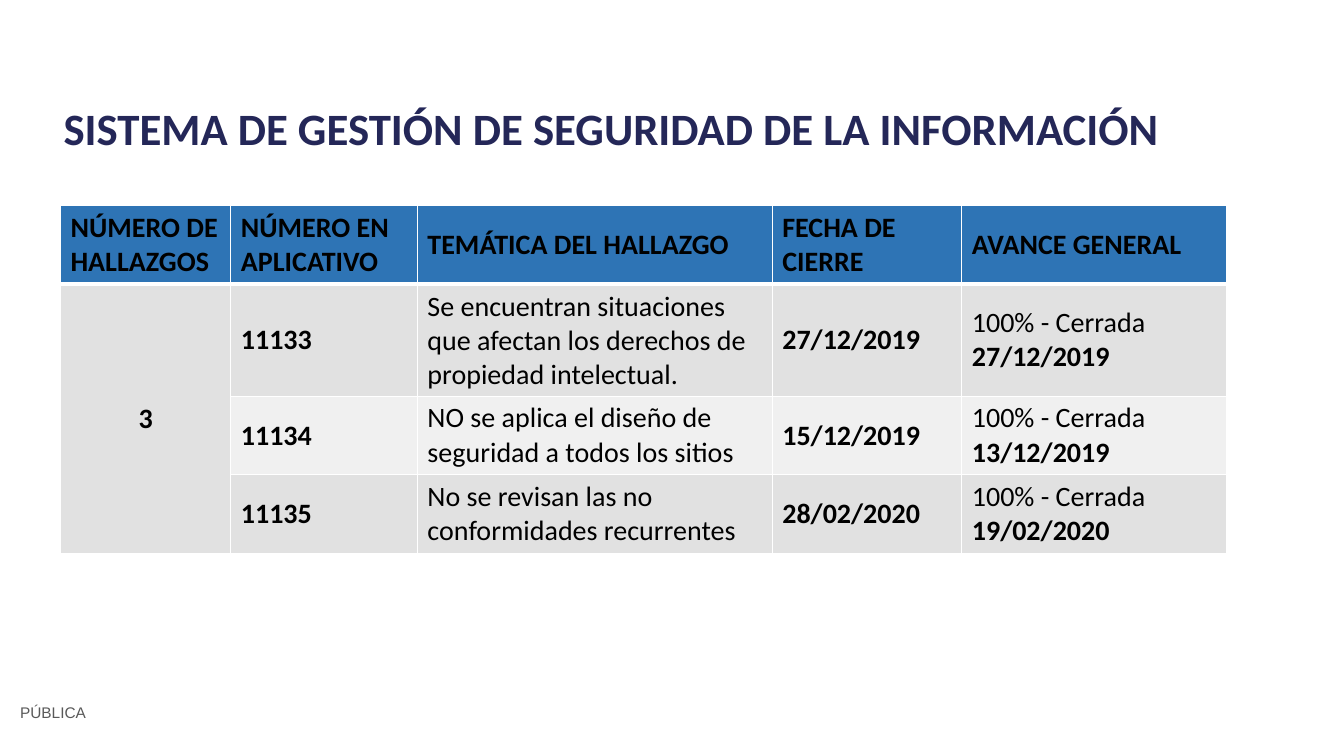
import pptx
import pptx.util
import pptx.dml.color
import pptx.enum.text
import pptx.oxml.ns
import lxml.etree
from dataclasses import dataclass

Inches = pptx.util.Inches
Align = pptx.enum.text.PP_ALIGN
Anchor = pptx.enum.text.MSO_ANCHOR


@dataclass(frozen=True)
class Theme:
    heading: str = "242758"
    label: str = "595959"
    text: str = "000000"
    header_fill: str = "2E74B5"
    band_fills: tuple = ("E1E1E1", "F0F0F0")
    border: str = "FFFFFF"
    font: str = "Calibri"
    label_font: str = "Arial"
    title_size: int = 32
    table_size: int = 20
    label_size: int = 11


theme = Theme()


def format_run(run, size, color, bold=False, font=theme.font):
    run.font.name = font
    run.font.size = pptx.util.Pt(size)
    run.font.bold = bold
    run.font.color.rgb = pptx.dml.color.RGBColor.from_string(color)


def add_border(cell, side, points):
    qn = pptx.oxml.ns.qn
    properties = cell._tc.get_or_add_tcPr()
    line = lxml.etree.SubElement(properties, qn(f"a:ln{side}"), w=str(pptx.util.Pt(points)))
    fill = lxml.etree.SubElement(line, qn("a:solidFill"))
    lxml.etree.SubElement(fill, qn("a:srgbClr"), val=theme.border)


presentation = pptx.Presentation()
presentation.slide_width = Inches(13.33)
presentation.slide_height = Inches(7.5)
slide = presentation.slides.add_slide(presentation.slide_layouts[5])

title = slide.shapes.title
title.left, title.top = Inches(0.53), Inches(0.95)
title.width, title.height = Inches(11.7), Inches(0.64)
title.text_frame.text = "SISTEMA DE GESTIÓN DE SEGURIDAD DE LA INFORMACIÓN"
title.text_frame.auto_size = pptx.enum.text.MSO_AUTO_SIZE.NONE
title.text_frame.vertical_anchor = Anchor.TOP
title.text_frame.paragraphs[0].alignment = Align.LEFT
format_run(title.text_frame.paragraphs[0].runs[0], theme.title_size, theme.heading, True)

label = slide.shapes.add_textbox(Inches(0.1), Inches(6.93), Inches(1.19), Inches(0.29))
label.text_frame.word_wrap = True
label.text_frame.text = "PÚBLICA"
format_run(label.text_frame.paragraphs[0].runs[0], theme.label_size, theme.label, font=theme.label_font)

headers = ["NÚMERO DE HALLAZGOS", "NÚMERO EN APLICATIVO", "TEMÁTICA DEL HALLAZGO",
           "FECHA DE CIERRE", "AVANCE GENERAL"]
findings = [
    ("11133", "Se encuentran situaciones que afectan los derechos de propiedad intelectual.",
     "27/12/2019", "27/12/2019"),
    ("11134", "NO se aplica el diseño de seguridad a todos los sitios", "15/12/2019", "13/12/2019"),
    ("11135", "No se revisan las no conformidades recurrentes", "28/02/2020", "19/02/2020"),
]

rows = [[[(header, True)] for header in headers]]
for index, (number, topic, due_date, closed_date) in enumerate(findings):
    count = [(str(len(findings)), True)] if index == 0 else []
    rows.append([count, [(number, True)], [(topic, False)], [(due_date, True)],
                 [("100% - Cerrada ", False), (closed_date, True)]])

column_widths = [1.69, 1.85, 3.52, 1.88, 2.63]
row_heights = [0.78, 1.11, 0.78, 0.78]
table = slide.shapes.add_table(len(rows), len(headers), Inches(0.6), Inches(2.04),
                               Inches(sum(column_widths)), Inches(sum(row_heights))).table
for column, width in zip(table.columns, column_widths):
    column.width = Inches(width)
for row, height in zip(table.rows, row_heights):
    row.height = Inches(height)

for row_index, row in enumerate(rows):
    fill_color = theme.band_fills[(row_index - 1) % 2] if row_index else theme.header_fill
    for column_index, pieces in enumerate(row):
        cell = table.cell(row_index, column_index)
        cell.vertical_anchor = Anchor.MIDDLE
        add_border(cell, "L", 1)
        add_border(cell, "R", 1)
        add_border(cell, "T", 3 if row_index == 1 else 1)
        add_border(cell, "B", 3 if row_index == 0 else 1)
        cell.fill.solid()
        cell.fill.fore_color.rgb = pptx.dml.color.RGBColor.from_string(fill_color)
        paragraph = cell.text_frame.paragraphs[0]
        for text, bold in pieces:
            run = paragraph.add_run()
            run.text = text
            format_run(run, theme.table_size, theme.text, bold)

count_cell = table.cell(1, 0)
count_cell.merge(table.cell(len(findings), 0))
count_cell.text_frame.paragraphs[0].alignment = Align.CENTER

presentation.save("out.pptx")
